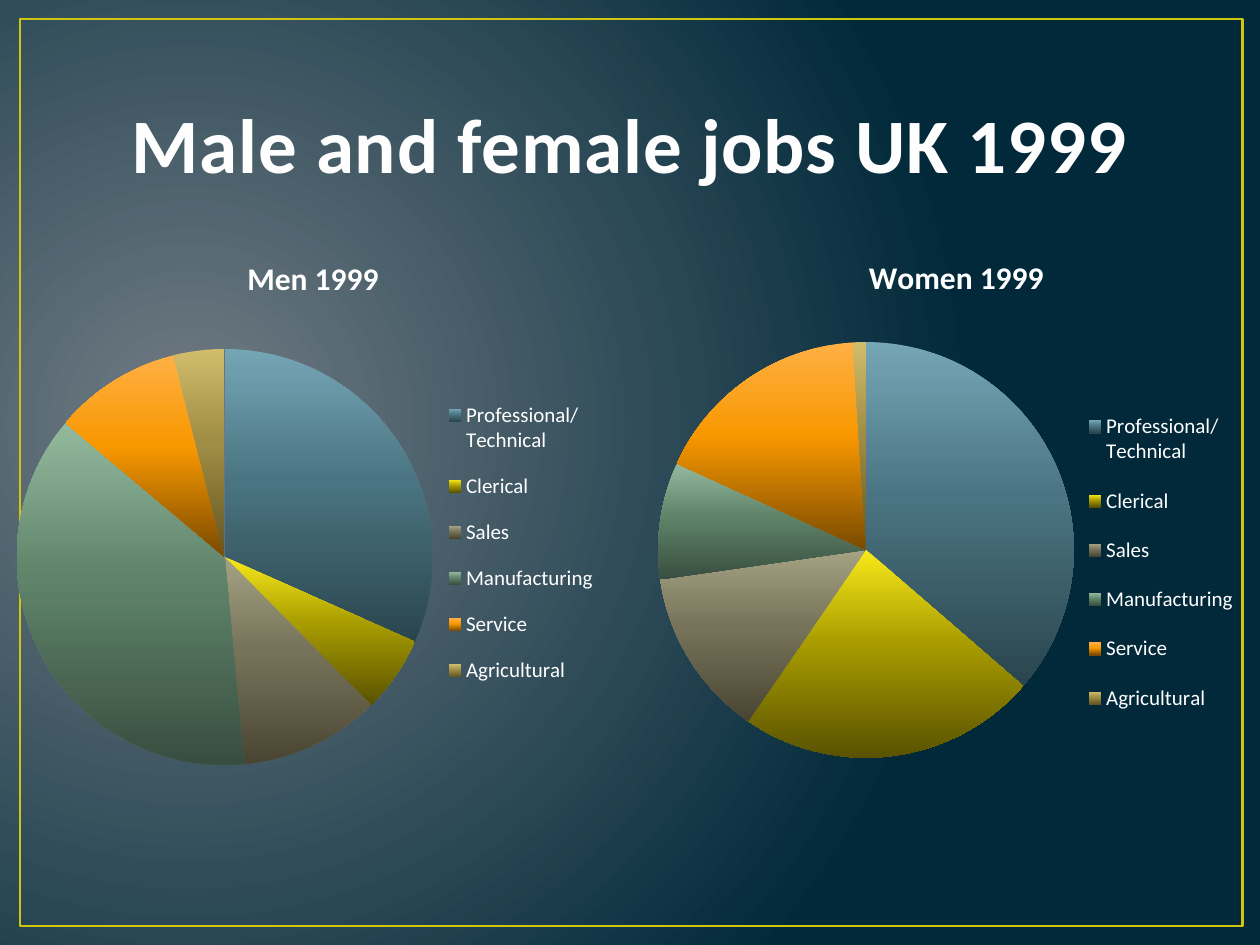
from lxml.etree import SubElement
from pptx import Presentation
from pptx.chart.data import CategoryChartData
from pptx.dml.color import RGBColor
from pptx.enum.chart import XL_CHART_TYPE as ChartType, XL_LEGEND_POSITION as LegendPosition
from pptx.enum.shapes import MSO_SHAPE as Shape
from pptx.enum.text import MSO_ANCHOR as Anchor, PP_ALIGN as Align
from pptx.oxml import parse_xml
from pptx.oxml.ns import nsdecls, qn
from pptx.util import Pt

FONT = "Calibri"
WHITE = "FFFFFF"
HEADING = "Male and female jobs UK 1999"
JOBS = [
    ("Professional/Technical", ("75A6B6", "4A7481", "2A454E")),
    ("Clerical", ("F8E91A", "A89C00", "5A5200")),
    ("Sales", ("A5A284", "77735A", "4A4532")),
    ("Manufacturing", ("93B99D", "5F846A", "394E40")),
    ("Service", ("FFB044", "F89800", "7A4A00")),
    ("Agricultural", ("D0BC6A", "A08D45", "655522")),
]
PIES = [
    {
        "title": "Men 1999", "shares": (32, 6, 11, 38, 10, 4),
        "box": (0, 126, 354.24, 341.28),
        "title_at": (0.39, 0.05),
        "plot_at": (0.027, 0.215, 0.671, 0.697),
        "legend_at": (0.71, 0.27, 0.26, 0.54),
    },
    {
        "title": "Women 1999", "shares": (36, 23, 13, 9, 17, 1),
        "box": (365.76, 126, 354.24, 334.08),
        "title_at": (0.36, 0.05),
        "plot_at": (0.029, 0.208, 0.671, 0.711),
        "legend_at": (0.71, 0.29, 0.26, 0.59),
    },
]


def rgb(value):
    return RGBColor.from_string(value)


def style(font, size, color, bold=False):
    font.name, font.size, font.bold = FONT, Pt(size), bold
    font.color.rgb = rgb(color)


def set_gradient(fill, properties, stops, direction):
    fill.gradient()
    stop_list = "".join(
        f'<a:gs pos="{place * 1000}"><a:srgbClr val="{color}"/></a:gs>' for place, color in stops
    )
    gradient = parse_xml(
        f'<a:gradFill {nsdecls("a")} rotWithShape="1"><a:gsLst>{stop_list}</a:gsLst>'
        f"{direction}</a:gradFill>"
    )
    current = properties.find(qn("a:gradFill"))
    properties.replace(current, gradient)


def place(part, fractions, inner=False):
    layout = part.find(qn("c:layout"))
    if layout is None:
        layout = SubElement(part, qn("c:layout"))
        anchors = [part.find(qn(tag)) for tag in ("c:tx", "c:legendPos")]
        next(anchor for anchor in anchors if anchor is not None).addnext(layout)
    for child in list(layout):
        layout.remove(child)
    manual = SubElement(layout, qn("c:manualLayout"))
    settings = [("layoutTarget", "inner")] if inner else []
    settings += [("xMode", "edge"), ("yMode", "edge")]
    settings += zip("xywh", fractions)
    for tag, value in settings:
        SubElement(manual, qn(f"c:{tag}")).set("val", str(value))


def add_pie(slide, pie):
    data = CategoryChartData()
    data.categories = [job for job, _ in JOBS]
    data.add_series(pie["title"], pie["shares"])
    chart = slide.shapes.add_chart(ChartType.PIE, *map(Pt, pie["box"]), data).chart
    style(chart.font, 10, WHITE)

    chart.has_title = True
    caption = chart.chart_title.text_frame
    caption.text = pie["title"]
    style(caption.paragraphs[0].font, 18, WHITE, True)
    chart.chart_title.include_in_layout = False
    place(chart.chart_title._element, pie["title_at"])

    chart.has_legend = True
    chart.legend.position = LegendPosition.RIGHT
    chart.legend.include_in_layout = False
    style(chart.legend.font, 12, WHITE)
    place(chart.legend._element, pie["legend_at"])

    plot = chart.plots[0]
    plot.vary_by_categories = True
    plot_area = plot._element.getparent()
    if plot_area.find(qn("c:layout")) is None:
        plot_area.insert(0, plot_area.makeelement(qn("c:layout")))
    place(plot_area, pie["plot_at"], True)
    for index, (_, shades) in enumerate(JOBS):
        wedge = plot.series[0].points[index].format
        wedge.line.fill.background()
        properties = plot.series[0]._element.findall(qn("c:dPt"))[index].find(qn("c:spPr"))
        set_gradient(wedge.fill, properties, zip((0, 45, 100), shades),
                     '<a:lin ang="5400000" scaled="0"/>')


def main():
    deck = Presentation()
    deck.slide_width, deck.slide_height = Pt(720), Pt(540)
    slide = deck.slides.add_slide(deck.slide_layouts[6])

    backdrop = slide.background.fill
    backdrop.gradient()
    properties = slide._element.cSld.find(qn("p:bg")).find(qn("p:bgPr"))
    set_gradient(backdrop, properties, [(0, "717C84"), (100, "01293A")],
                 '<a:path path="circle">'
                 '<a:fillToRect l="15000" t="50000" r="85000" b="60000"/></a:path>')

    frame = slide.shapes.add_shape(Shape.RECTANGLE, Pt(11.5), Pt(10.8), Pt(698.4), Pt(518.4))
    frame.shadow.inherit = False
    frame.fill.background()
    frame.line.color.rgb = rgb("CFC60D")
    frame.line.width = Pt(1.5)

    heading = slide.shapes.add_textbox(Pt(36), Pt(43.92), Pt(648), Pt(67.68)).text_frame
    heading.word_wrap = True
    heading.vertical_anchor = Anchor.BOTTOM
    paragraph = heading.paragraphs[0]
    paragraph.text = HEADING
    paragraph.alignment = Align.CENTER
    style(paragraph.font, 44, "FEFEFE", True)
    paragraph.runs[0].font._element.set("spc", "50")

    for pie in PIES:
        add_pie(slide, pie)
    deck.save("out.pptx")


if __name__ == "__main__":
    main()
